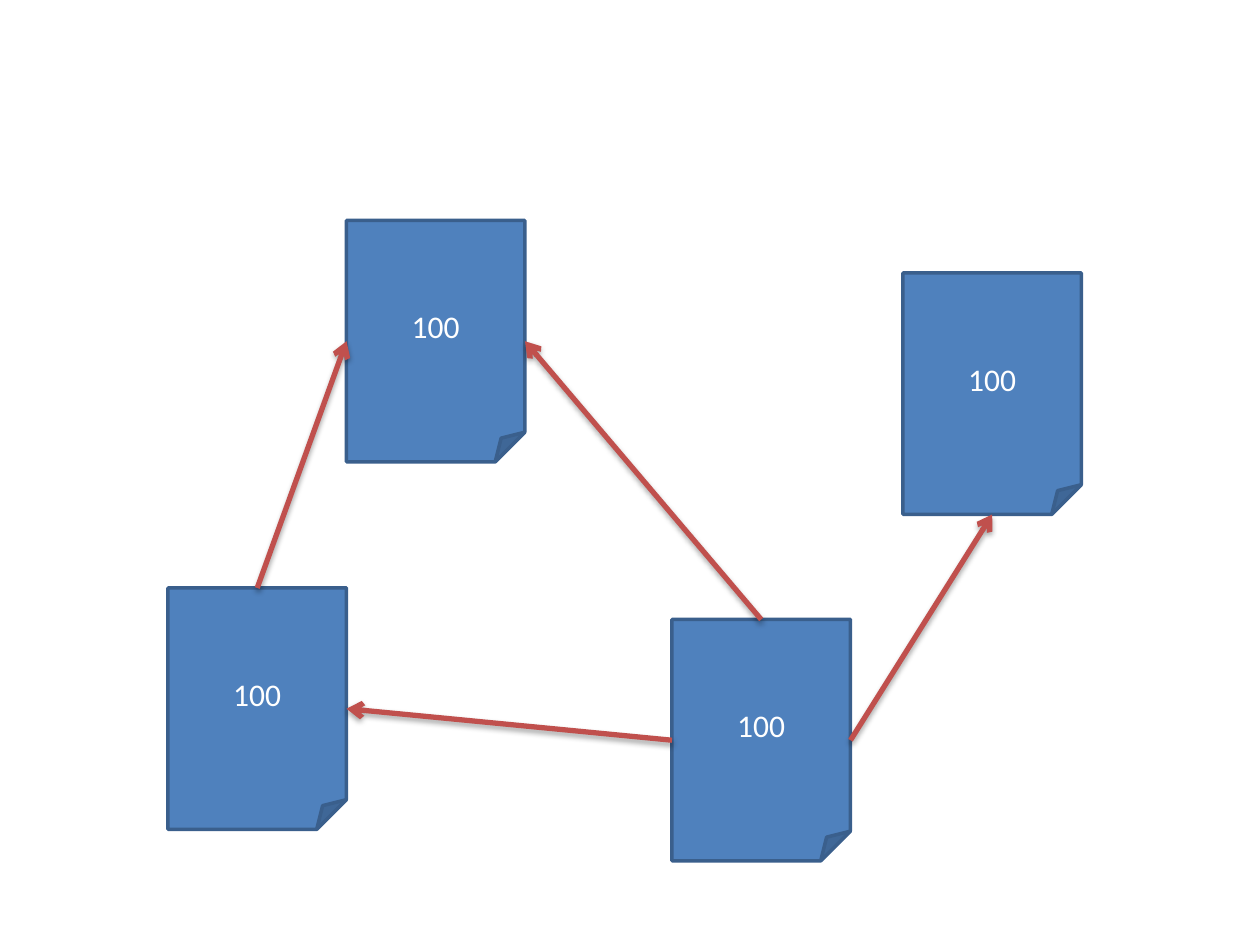
from lxml import etree
from pptx import Presentation
from pptx.dml.color import RGBColor
from pptx.enum.shapes import MSO_CONNECTOR, MSO_SHAPE
from pptx.enum.text import MSO_ANCHOR, PP_ALIGN
from pptx.oxml import parse_xml
from pptx.oxml.ns import nsdecls, qn
from pptx.util import Emu, Pt

FOLDED_CORNER = MSO_SHAPE.FOLDED_CORNER
STRAIGHT = MSO_CONNECTOR.STRAIGHT
MIDDLE = MSO_ANCHOR.MIDDLE
CENTER = PP_ALIGN.CENTER

BLUE = RGBColor(0x4F, 0x81, 0xBD)
DARK_BLUE = RGBColor(0x3A, 0x5F, 0x8C)
RED = RGBColor(0xC0, 0x50, 0x4D)
WHITE = RGBColor(0xFF, 0xFF, 0xFF)

PX = 7620
PAGE_WIDTH, PAGE_HEIGHT = 1200, 900
NOTE_WIDTH, NOTE_HEIGHT = 170, 230
TOP, LEFT, BOTTOM, RIGHT = range(4)

SHADOW = (
    f'<a:effectLst {nsdecls("a")}>'
    '<a:outerShdw blurRad="40000" dist="23000" dir="5400000" rotWithShape="0">'
    '<a:srgbClr val="000000"><a:alpha val="35000"/></a:srgbClr>'
    '</a:outerShdw></a:effectLst>'
)


def px(length):
    """Turn a length in px into EMU."""
    return Emu(length * PX)


def add_note(page, left, top, text):
    """Add one folded note and return it."""
    note = page.shapes.add_shape(
        FOLDED_CORNER, px(left), px(top), px(NOTE_WIDTH), px(NOTE_HEIGHT))
    note.shadow.inherit = False
    note.fill.solid()
    note.fill.fore_color.rgb = BLUE
    note.line.color.rgb = DARK_BLUE
    note.line.width = Pt(2)
    frame = note.text_frame
    frame.text = text
    frame.vertical_anchor = MIDDLE
    para = frame.paragraphs[0]
    para.alignment = CENTER
    font = para.runs[0].font
    font.name = "Calibri"
    font.size = Pt(18)
    font.color.rgb = WHITE
    return note


def add_arrow(page, source, source_side, target, target_side):
    """Join the sides of two notes with a shadowed arrow."""
    arrow = page.shapes.add_connector(STRAIGHT, 0, 0, 0, 0)
    arrow.begin_connect(source, source_side)
    arrow.end_connect(target, target_side)
    arrow.line.color.rgb = RED
    arrow.line.width = Pt(3)
    etree.SubElement(arrow.line._get_or_add_ln(), qn("a:tailEnd"), type="arrow")
    arrow._element.spPr.append(parse_xml(SHADOW))


def add_link_graph(page, left, top):
    """Place the notes and their links from the given corner."""
    lower_left = add_note(page, left, top + 350, "100")
    upper_left = add_note(page, left + 170, top, "100")
    lower_right = add_note(page, left + 480, top + 380, "100")
    add_arrow(page, lower_left, TOP, upper_left, LEFT)
    add_arrow(page, lower_right, TOP, upper_left, RIGHT)
    add_arrow(page, lower_right, LEFT, lower_left, RIGHT)
    upper_right = add_note(page, left + 700, top + 50, "100")
    add_arrow(page, lower_right, RIGHT, upper_right, BOTTOM)


def main():
    """Build and save the deck."""
    deck = Presentation()
    deck.slide_width = px(PAGE_WIDTH)
    deck.slide_height = px(PAGE_HEIGHT)
    page = deck.slides.add_slide(deck.slide_layouts[6])
    add_link_graph(page, 160, 210)
    deck.save("out.pptx")


if __name__ == "__main__":
    main()
